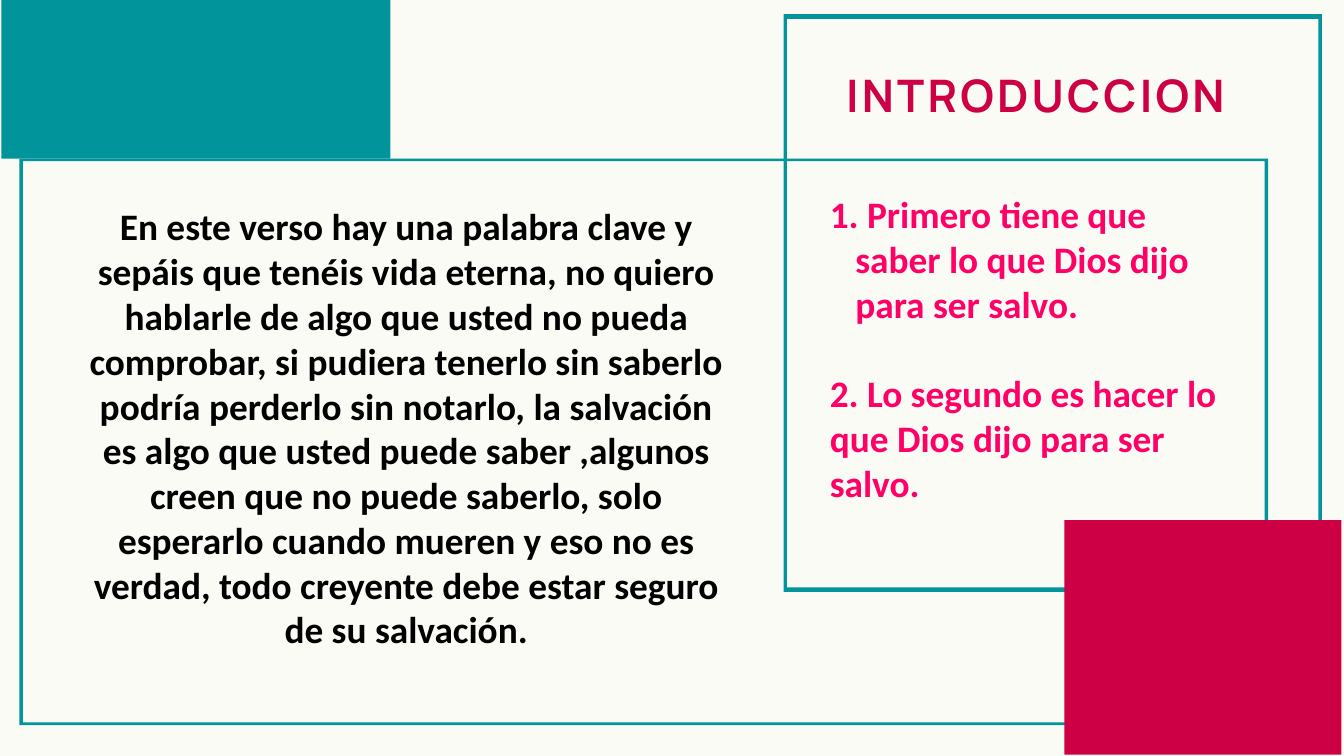
from lxml import etree
from pptx import Presentation
from pptx.dml.color import RGBColor
from pptx.enum import shapes, text
from pptx.oxml import ns
from pptx.util import Inches, Pt

TEAL = RGBColor(0x01, 0x94, 0x9A)
CRIMSON = RGBColor(0xCD, 0x00, 0x46)
PINK = RGBColor(0xFF, 0x00, 0x66)
BLACK = RGBColor(0x00, 0x00, 0x00)
CREAM = RGBColor(0xFB, 0xFB, 0xF5)

BODY = (
    "En este verso hay una palabra clave y sepáis que tenéis vida eterna, "
    "no quiero hablarle de algo que usted no pueda comprobar, si pudiera "
    "tenerlo sin saberlo podría perderlo sin notarlo, la salvación es algo "
    "que usted puede saber ,algunos creen que no puede saberlo, solo "
    "esperarlo cuando mueren y eso no es verdad, todo creyente debe estar "
    "seguro de su salvación."
)
STEPS = [
    " Primero tiene que saber lo que Dios dijo para ser salvo.",
    "2. Lo segundo es hacer lo que Dios dijo para ser salvo.",
]


class SlideBuilder:
    """Holds the style and the current slide and adds each kind of element."""

    heading_font = "Manrope"
    body_font = "Calibri"
    heading_size = Pt(48)
    body_size = Pt(40)

    def __init__(self, presentation):
        self.slide = presentation.slides.add_slide(presentation.slide_layouts[5])
        fill = self.slide.background.fill
        fill.solid()
        fill.fore_color.rgb = CREAM

    def paint(self, shape, color):
        shape.shadow.inherit = False
        shape.fill.solid()
        shape.fill.fore_color.rgb = color
        shape.line.fill.background()

    def format_runs(self, paragraph, name, size, color):
        for run in paragraph.runs:
            run.font.name = name
            run.font.size = size
            run.font.bold = True
            run.font.color.rgb = color

    def block(self, left, top, width, height, color):
        shape = self.slide.shapes.add_shape(
            shapes.MSO_SHAPE.RECTANGLE,
            Inches(left), Inches(top), Inches(width), Inches(height))
        self.paint(shape, color)

    def frame(self, left, top, width, height, side, edge, color):
        right, bottom = left + width, top + height
        outer = [(left, top), (right, top), (right, bottom), (left, bottom)]
        inner = [(left + side, top + edge), (left + side, bottom - edge),
                 (right - side, bottom - edge), (right - side, top + edge)]
        outer, inner = ([(Inches(x), Inches(y)) for x, y in corners]
                        for corners in (outer, inner))
        builder = self.slide.shapes.build_freeform(*outer[0])
        builder.add_line_segments(outer[1:], close=True)
        builder.move_to(*inner[0])
        builder.add_line_segments(inner[1:], close=True)
        self.paint(builder.convert_to_shape(), color)

    def title(self, left, top, width, height, wording, color):
        shape = self.slide.shapes.title
        shape.left, shape.top = Inches(left), Inches(top)
        shape.width, shape.height = Inches(width), Inches(height)
        frame = shape.text_frame
        frame.text = wording
        frame.word_wrap = True
        frame.auto_size = text.MSO_AUTO_SIZE.SHAPE_TO_FIT_TEXT
        frame.vertical_anchor = text.MSO_ANCHOR.TOP
        frame.margin_left = frame.margin_right = 0
        frame.margin_top = frame.margin_bottom = 0
        paragraph = frame.paragraphs[0]
        paragraph.alignment = text.PP_ALIGN.LEFT
        paragraph.line_spacing = Pt(70.8)
        self.format_runs(paragraph, self.heading_font, self.heading_size, color)
        paragraph.runs[0]._r.get_or_add_rPr().set("spc", "350")

    def text_box(self, left, top, width, height, wordings, color, alignment):
        shape = self.slide.shapes.add_textbox(
            Inches(left), Inches(top), Inches(width), Inches(height))
        frame = shape.text_frame
        frame.text = "\n".join(wordings)
        frame.word_wrap = True
        frame.auto_size = text.MSO_AUTO_SIZE.SHAPE_TO_FIT_TEXT
        for paragraph in frame.paragraphs:
            paragraph.alignment = alignment
            self.format_runs(paragraph, self.body_font, self.body_size, color)
        return frame.paragraphs

    def number(self, paragraph, indent):
        properties = paragraph._p.get_or_add_pPr()
        properties.set("marL", str(Inches(indent)))
        properties.set("indent", str(-Inches(indent)))
        etree.SubElement(properties, ns.qn("a:buFont"), typeface="+mj-lt")
        etree.SubElement(properties, ns.qn("a:buAutoNum"), type="arabicPeriod")


def main():
    presentation = Presentation()
    presentation.slide_width = Inches(20)
    presentation.slide_height = Inches(11.25)
    builder = SlideBuilder(presentation)
    builder.frame(0.29, 2.36, 18.58, 8.43, 0.05, 0.04, TEAL)
    builder.frame(11.66, 0.21, 8.01, 8.6, 0.05, 0.07, TEAL)
    builder.title(12.59, 0.82, 6.52, 0.92, "INTRODUCCION", CRIMSON)
    builder.block(15.84, 7.74, 4.12, 3.49, CRIMSON)
    builder.block(0.02, -0.06, 5.79, 2.42, TEAL)
    builder.text_box(1.23, 2.98, 9.63, 6.83, [BODY], BLACK, text.PP_ALIGN.CENTER)
    first, second = builder.text_box(
        12.25, 2.8, 6.15, 4.81, STEPS, PINK, text.PP_ALIGN.LEFT)
    builder.number(first, 0.38)
    second.space_before = Pt(48)
    presentation.save("out.pptx")


if __name__ == "__main__":
    main()
